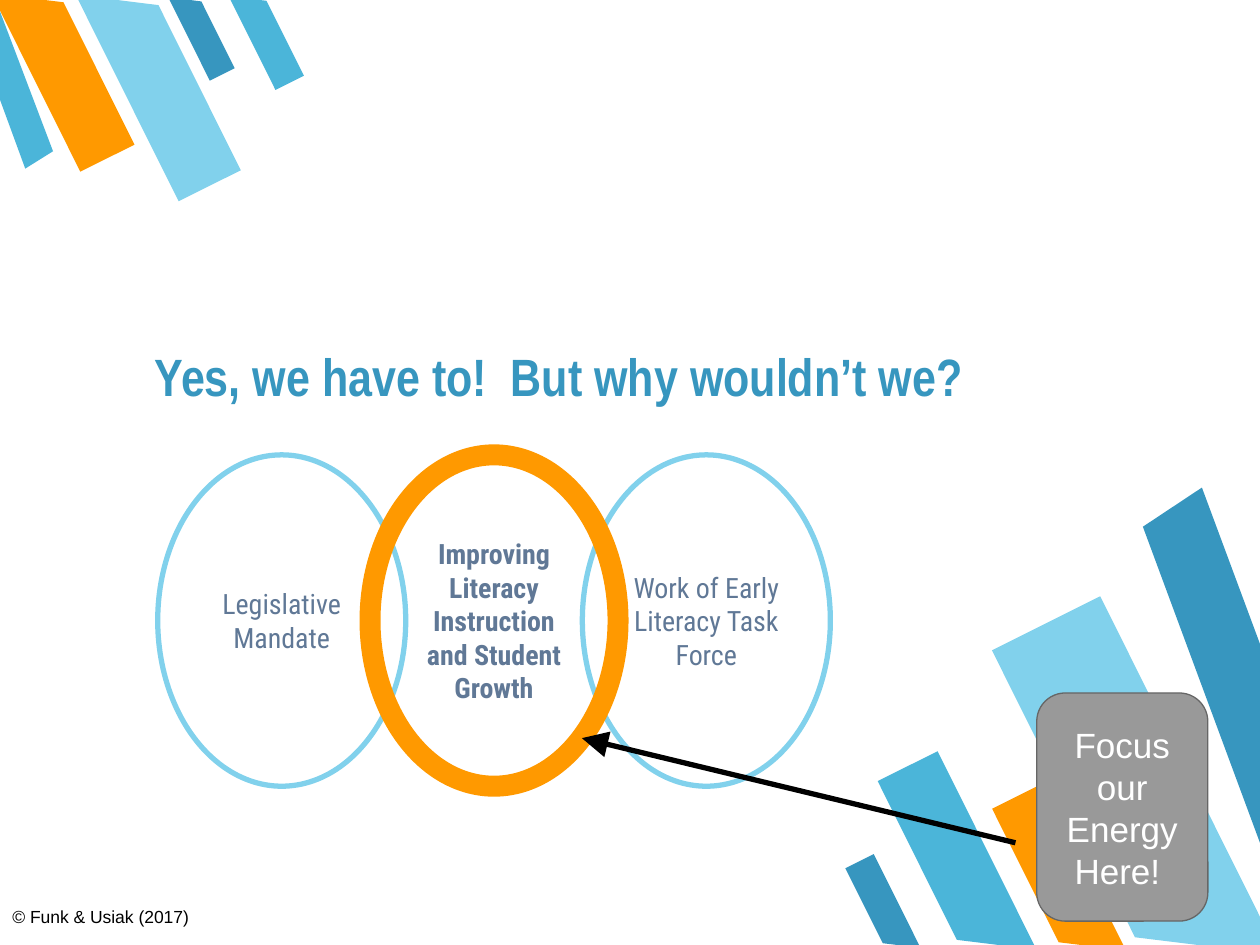
from dataclasses import dataclass

from lxml.etree import SubElement
from pptx import Presentation
from pptx.dml.color import RGBColor
from pptx.enum.shapes import MSO_CONNECTOR, MSO_SHAPE
from pptx.enum.text import MSO_ANCHOR, PP_ALIGN
from pptx.oxml.ns import qn
from pptx.util import Cm, Pt


@dataclass(frozen=True)
class Theme:
    dark_blue: str = "3796BF"
    blue: str = "4BB5D9"
    light_blue: str = "81D1EC"
    orange: str = "FF9900"
    slate: str = "607896"
    gray: str = "999999"
    dark_gray: str = "666666"
    black: str = "000000"
    white: str = "FFFFFF"
    title_font: str = "Arial Narrow"
    circle_font: str = "Roboto Condensed"
    plain_font: str = "Arial"
    title_size: int = 30
    callout_size: int = 20
    circle_size: int = 16
    footer_size: int = 10


THEME = Theme()

# Stripes: left, top, width, height in cm, then colour
BOTTOM_STRIPES = [
    (18.62, 15.21, 1.35, 4.47, THEME.blue),
    (21.67, 12.14, 2.44, 8.08, THEME.light_blue),
    (20.78, 15.85, 1.14, 3.76, THEME.orange),
    (17.48, 17.25, 0.64, 2.11, THEME.dark_blue),
]
TOP_STRIPES = [
    (3.78, -0.28, 0.56, 1.88, THEME.dark_blue),
    (0.66, -0.61, 1.22, 4.01, THEME.orange),
    (2.49, -0.66, 1.4, 4.65, THEME.light_blue),
    (5.05, -0.33, 0.64, 2.11, THEME.blue),
]
RIGHT_EDGE = [(24.23, 9.83), (23.04, 10.62), (25.4, 16.99), (25.4, 12.98)]
LEFT_EDGE = [(0.51, 3.4), (1.07, 3.05), (0, 0.23), (0, 2.01)]


def color(value):
    return RGBColor.from_string(value)


def paint(shape, fill=None, line=None, width=0):
    shape.shadow.inherit = False
    if fill:
        shape.fill.solid()
        shape.fill.fore_color.rgb = color(fill)
    else:
        shape.fill.background()
    if line:
        shape.line.color.rgb = color(line)
        shape.line.width = Pt(width)
    else:
        shape.line.fill.background()


def write(shape, text, font, size, ink, bold=False,
          align=PP_ALIGN.CENTER, anchor=MSO_ANCHOR.MIDDLE):
    frame = shape.text_frame
    frame.word_wrap = True
    frame.vertical_anchor = anchor
    frame.margin_left = frame.margin_right = Cm(0.25)
    frame.margin_top = frame.margin_bottom = Cm(0.25)
    para = frame.paragraphs[0]
    para.text = text
    para.alignment = align
    para.font.name = font
    para.font.size = Pt(size)
    para.font.bold = bold
    para.font.color.rgb = color(ink)


def add_shape(page, kind, left, top, width, height):
    return page.shapes.add_shape(kind, Cm(left), Cm(top), Cm(width), Cm(height))


def add_text(page, left, top, width, height, text, font, size, ink, **style):
    box = page.shapes.add_textbox(Cm(left), Cm(top), Cm(width), Cm(height))
    write(box, text, font, size, ink, align=PP_ALIGN.LEFT, **style)


def add_stripes(page, stripes, rotation):
    for *place, fill in stripes:
        stripe = add_shape(page, MSO_SHAPE.FLOWCHART_MANUAL_INPUT, *place)
        stripe.rotation = rotation
        stripe._element.spPr.xfrm.set("flipH", "1")
        paint(stripe, fill)


def add_polygon(page, points, fill):
    start, *others = [(Cm(x), Cm(y)) for x, y in points]
    builder = page.shapes.build_freeform(*start)
    builder.add_line_segments(others, close=True)
    paint(builder.convert_to_shape(), fill)


def add_circle(page, column, text, line, width, bold=False):
    circle = add_shape(page, MSO_SHAPE.OVAL, 3.18 + 4.28 * column, 9.17, 5, 6.68)
    paint(circle, line=line, width=width)
    write(circle, text, THEME.circle_font, THEME.circle_size, THEME.slate, bold)


def add_arrow(page, *ends):
    arrow = page.shapes.add_connector(MSO_CONNECTOR.STRAIGHT, *map(Cm, ends))
    arrow.line.color.rgb = color(THEME.black)
    arrow.line.width = Pt(3)
    SubElement(arrow.line._get_or_add_ln(), qn("a:tailEnd"),
               type="triangle", w="lg", len="lg")
    SubElement(arrow._element.spPr, qn("a:effectLst"))


def main():
    deck = Presentation()
    deck.slide_width, deck.slide_height = Cm(25.4), Cm(19.05)
    page = deck.slides.add_slide(deck.slide_layouts[6])

    # Footer and corner decoration
    add_text(page, 0, 18.06, 5.18, 0.58, "© Funk & Usiak (2017)",
             THEME.plain_font, THEME.footer_size, THEME.black,
             anchor=MSO_ANCHOR.TOP)
    add_stripes(page, BOTTOM_STRIPES, 153.5)
    add_polygon(page, RIGHT_EDGE, THEME.dark_blue)
    add_stripes(page, TOP_STRIPES, 333.5)
    add_polygon(page, LEFT_EDGE, THEME.blue)

    # Title
    add_text(page, 2.87, 5.94, 20.12, 2.51,
             "Yes, we have to!  But why wouldn’t we?",
             THEME.title_font, THEME.title_size, THEME.dark_blue,
             bold=True, anchor=MSO_ANCHOR.BOTTOM)

    # Overlapping circles, the middle one in front
    add_circle(page, 0, "Legislative Mandate", THEME.light_blue, 3)
    add_circle(page, 2, "Work of Early Literacy Task Force", THEME.light_blue, 3)
    add_circle(page, 1, "Improving Literacy Instruction and Student Growth",
               THEME.orange, 12, bold=True)

    # Callout pointing at the middle circle
    add_arrow(page, 20.47, 16.99, 11.73, 14.88)
    callout = add_shape(page, MSO_SHAPE.ROUNDED_RECTANGLE, 20.9, 13.97, 3.45, 4.6)
    paint(callout, THEME.gray, THEME.dark_gray, 0.75)
    write(callout, "Focus our Energy Here! ", THEME.plain_font,
          THEME.callout_size, THEME.white)

    deck.save("out.pptx")


if __name__ == "__main__":
    main()
